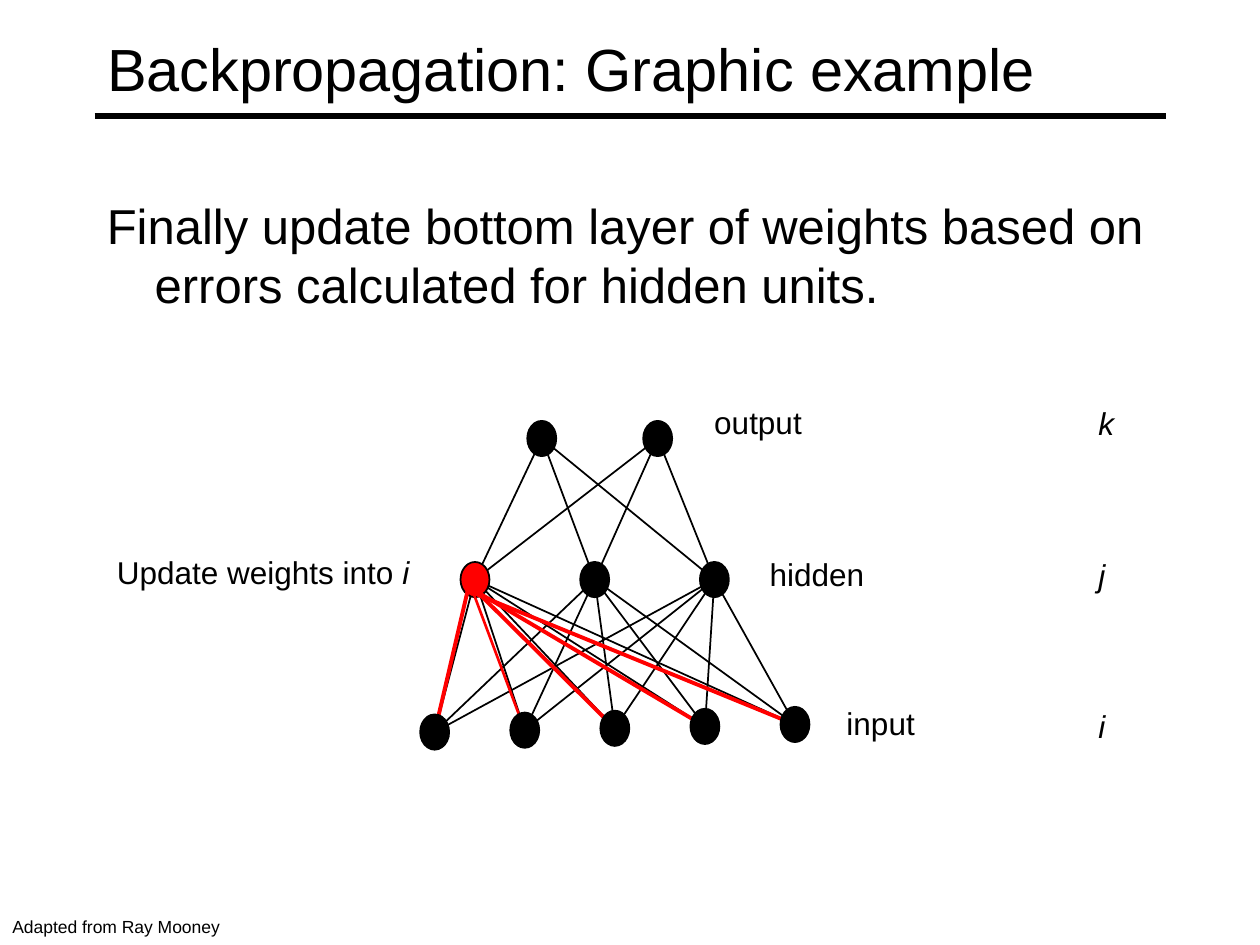
import pptx
import pptx.util
import pptx.dml.color
import pptx.enum.shapes
import pptx.enum.text
import pptx.oxml.ns
import lxml.etree

Inches = pptx.util.Inches
Pt = pptx.util.Pt
RGB = pptx.dml.color.RGBColor
ALIGN = pptx.enum.text.PP_ALIGN
ANCHOR = pptx.enum.text.MSO_ANCHOR
theme = {
    "font": "Arial",
    "ink": RGB(0, 0, 0),
    "hot": RGB(255, 0, 0),
    "title": 34,
    "body": 28,
    "label": 18,
    "note": 10,
}

deck = pptx.Presentation()
deck.slide_width = Inches(10)
deck.slide_height = Inches(7.5)
slide = deck.slides.add_slide(deck.slide_layouts[5])
shapes = slide.shapes


def write(box, place, paras, size, wrap=False, anchor=ANCHOR.TOP):
    box.left, box.top, box.width, box.height = map(Inches, place)
    frame = box.text_frame
    form = {"word_wrap": wrap, "vertical_anchor": anchor,
            "auto_size": pptx.enum.text.MSO_AUTO_SIZE.NONE}
    for key, val in form.items():
        setattr(frame, key, val)
    for num, runs in enumerate(paras):
        para = frame.add_paragraph() if num else frame.paragraphs[0]
        para.alignment = ALIGN.LEFT
        for text, slant in runs:
            run = para.add_run()
            run.text = text
            look = {"name": theme["font"], "size": Pt(theme[size]), "italic": slant}
            for key, val in look.items():
                setattr(run.font, key, val)
            run.font.color.rgb = theme["ink"]
    return frame


def link(start, end, color, width):
    line = shapes.add_connector(
        pptx.enum.shapes.MSO_CONNECTOR.STRAIGHT, *map(Inches, (*start, *end)))
    line.line.color.rgb = theme[color]
    line.line.width = Pt(width)
    lxml.etree.SubElement(line._element.spPr, pptx.oxml.ns.qn("a:effectLst"))


write(shapes.title, (0.75, 0.08, 8.5, 0.92),
      [[("Backpropagation: Graphic example", False)]], "title", True, ANCHOR.MIDDLE)
link((0.75, 0.92), (9.25, 0.92), "ink", 3)

body = write(
    shapes.add_textbox(0, 0, 0, 0), (0.75, 1.5, 8.5, 1.22),
    [[("Finally update bottom layer of weights based on errors calculated for hidden units.", False)]],
    "body", True)
para = body.paragraphs[0]
para.space_before = Pt(5.6)
props = para._p.get_or_add_pPr()
for key, val in {"marL": 0.38, "indent": -0.38}.items():
    props.set(key, str(Inches(val)))

top = [(4.3 + 0.92 * n, 3.48) for n in range(2)]
mid = [(3.77 + 0.95 * n, 4.6) for n in range(3)]
low = [(3.45 + 0.715 * n, 5.81 - 0.015 * n) for n in range(5)]
for upper, lower in ((top, mid), (mid, low)):
    for start in upper:
        for end in lower:
            link(start, end, "ink", 1)

wide, high = 0.23, 0.28
starts = [(3.73, 4.61), (3.74, 4.66), (3.81, 4.72), (3.79, 4.7), (3.79, 4.72)]
for layer in (top, mid, low):
    if layer is low:
        for num, (start, end) in enumerate(zip(starts, low)):
            link(start, end, "hot", 1.5 if num == 1 else 2.25)
    for x, y in layer:
        node = shapes.add_shape(
            pptx.enum.shapes.MSO_SHAPE.OVAL,
            *map(Inches, (x - wide / 2, y - high / 2, wide, high)))
        node.shadow.inherit = False
        node.fill.solid()
        node.fill.fore_color.rgb = theme["hot" if (x, y) == mid[0] else "ink"]
        node.line.color.rgb = theme["ink"]
        node.line.width = Pt(1)

labels = [
    ((5.57, 3.15, 0.91, 0.43), [("output", False)], "label"),
    ((6.01, 4.36, 0.95, 0.44), [("hidden", False)], "label"),
    ((6.62, 5.54, 0.77, 0.43), [("input", False)], "label"),
    ((0.83, 4.34, 2.54, 0.41), [("Update weights into ", False), ("i", True)], "label"),
    ((0, 7.22, 1.87, 0.27), [("Adapted from Ray Mooney", False)], "note"),
]
for place, runs, size in labels:
    write(shapes.add_textbox(0, 0, 0, 0), place, [runs], size)

index = write(shapes.add_textbox(0, 0, 0, 0), (8.62, 3.16, 0.33, 2.83),
              [[(name, True)] for name in "kji"], "label")
for para in index.paragraphs[1:]:
    para.space_before = Pt(65)

deck.save("out.pptx")
